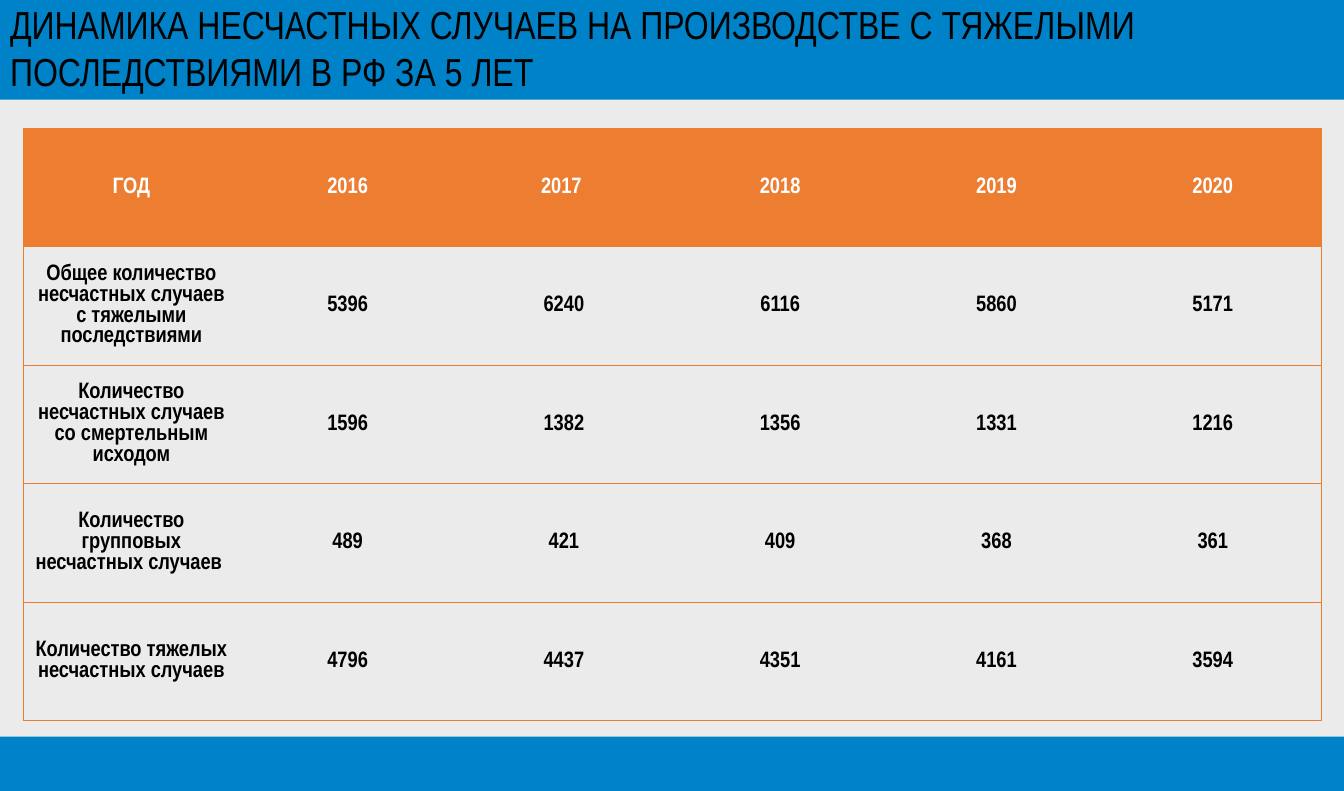
"""Build the slide on serious workplace accidents over five years."""
from dataclasses import dataclass

from lxml.etree import SubElement
from pptx import Presentation
from pptx.dml.color import RGBColor
from pptx.enum.shapes import MSO_SHAPE
from pptx.enum.text import MSO_ANCHOR, PP_ALIGN
from pptx.oxml.ns import qn
from pptx.slide import Slide
from pptx.util import Cm, Pt

COLORS = {"blue": "0082C8", "panel": "EBEBEB", "orange": "ED7D31",
          "black": "000000", "white": "FFFFFF"}
SLIDE_WIDTH, SLIDE_HEIGHT = Cm(34), Cm(20)
FONT = "Arial Narrow"
TITLE = ("ДИНАМИКА НЕСЧАСТНЫХ СЛУЧАЕВ НА ПРОИЗВОДСТВЕ С ТЯЖЕЛЫМИ "
         "ПОСЛЕДСТВИЯМИ В РФ ЗА 5 ЛЕТ")
NO_GRID_STYLE = "{2D5ABB26-0587-4C30-8999-92F81FD0307C}"


@dataclass(frozen=True)
class Area:
    """A rectangle given in percent of the slide."""
    left: float
    top: float
    width: float
    height: float

    def lengths(self) -> dict[str, int]:
        """Return the rectangle as slide lengths."""
        return {"left": int(SLIDE_WIDTH * self.left / 100),
                "top": int(SLIDE_HEIGHT * self.top / 100),
                "width": int(SLIDE_WIDTH * self.width / 100),
                "height": int(SLIDE_HEIGHT * self.height / 100)}


@dataclass(frozen=True)
class Row:
    """One table row: its label and yearly entries."""
    label: str
    years: tuple[str, ...]


TITLE_AREA = Area(0, -0.6, 100, 13.21)
PANEL_AREA = Area(0, 10.8, 100, 82.34)
TABLE_AREA = Area(1.73, 16.18, 96.56, 74.93)
ROWS = (
    Row("ГОД", ("2016", "2017 ", "2018", "2019", "2020")),
    Row("Общее количество несчастных случаев с тяжелыми последствиями",
        ("5396", "6240", "6116", "5860", "5171")),
    Row("Количество несчастных случаев со смертельным исходом",
        ("1596", "1382", "1356", "1331", "1216")),
    Row("Количество групповых несчастных случаев ",
        ("489", "421", "409", "368", "361")),
    Row("Количество тяжелых несчастных случаев",
        ("4796", "4437", "4351", "4161", "3594")),
)


def rgb(name: str) -> RGBColor:
    """Look up a named color."""
    return RGBColor.from_string(COLORS[name])


def set_all(target: object, values: dict) -> None:
    """Set attributes from a dict of values."""
    for name, value in values.items():
        setattr(target, name, value)


def write(frame, text: str, color: str, paragraph: dict, font: dict) -> None:
    """Write one formatted paragraph into a text frame."""
    para = frame.paragraphs[0]
    set_all(para, paragraph)
    span = para.add_run()
    span.text = text
    set_all(span.font, {"name": FONT, **font})
    span.font.color.rgb = rgb(color)


def draw_title(page: Slide) -> None:
    """Fill the title band."""
    title = page.shapes.title
    set_all(title, TITLE_AREA.lengths())
    title.fill.solid()
    title.fill.fore_color.rgb = rgb("blue")
    set_all(title.text_frame, {"word_wrap": True,
                               "vertical_anchor": MSO_ANCHOR.MIDDLE})
    write(title.text_frame, TITLE, "black", {"alignment": PP_ALIGN.LEFT},
          {"size": Pt(28), "bold": False})


def draw_panel(page: Slide) -> None:
    """Put the light panel behind the title band."""
    panel = page.shapes.add_shape(MSO_SHAPE.RECTANGLE, **PANEL_AREA.lengths())
    panel.shadow.inherit = False
    panel.fill.solid()
    panel.fill.fore_color.rgb = rgb("panel")
    panel.line.fill.background()
    page.shapes.title.element.addprevious(panel.element)


def draw_borders(cell, sides: str) -> None:
    """Add thin orange cell lines on the given sides, in schema order."""
    properties = cell._tc.get_or_add_tcPr()
    for index, side in enumerate(sides):
        line = SubElement(properties, qn(f"a:ln{side}"), w=str(Pt(0.5)))
        fill = SubElement(line, qn("a:solidFill"))
        SubElement(fill, qn("a:srgbClr"), val=COLORS["orange"])
        properties.insert(index, line)


def draw_table(page: Slide) -> None:
    """Add the accident table."""
    last_column = len(ROWS[0].years)
    frame = page.shapes.add_table(len(ROWS), last_column + 1,
                                  **TABLE_AREA.lengths())
    table = frame.table
    table.horz_banding = False
    table._tbl.tblPr.find(qn("a:tableStyleId")).text = NO_GRID_STYLE
    for row_index, row in enumerate(ROWS):
        is_header = row_index == 0
        for column, text in enumerate((row.label, *row.years)):
            cell = table.cell(row_index, column)
            cell.vertical_anchor = MSO_ANCHOR.MIDDLE
            if is_header:
                cell.fill.solid()
                cell.fill.fore_color.rgb = rgb("orange")
            else:
                cell.fill.background()
            write(cell.text_frame, text, "white" if is_header else "black",
                  {"alignment": PP_ALIGN.CENTER, "line_spacing": Pt(15)},
                  {"size": Pt(16), "bold": True})
            outer_side = {0: "L", last_column: "R"}.get(column, "")
            draw_borders(cell, outer_side + "TB")


def main() -> None:
    """Create and save the deck."""
    deck = Presentation()
    set_all(deck, {"slide_width": SLIDE_WIDTH, "slide_height": SLIDE_HEIGHT})
    page = deck.slides.add_slide(deck.slide_layouts.get_by_name("Title Only"))
    page.background.fill.solid()
    page.background.fill.fore_color.rgb = rgb("blue")
    draw_title(page)
    draw_panel(page)
    draw_table(page)
    deck.save("out.pptx")


if __name__ == "__main__":
    main()
